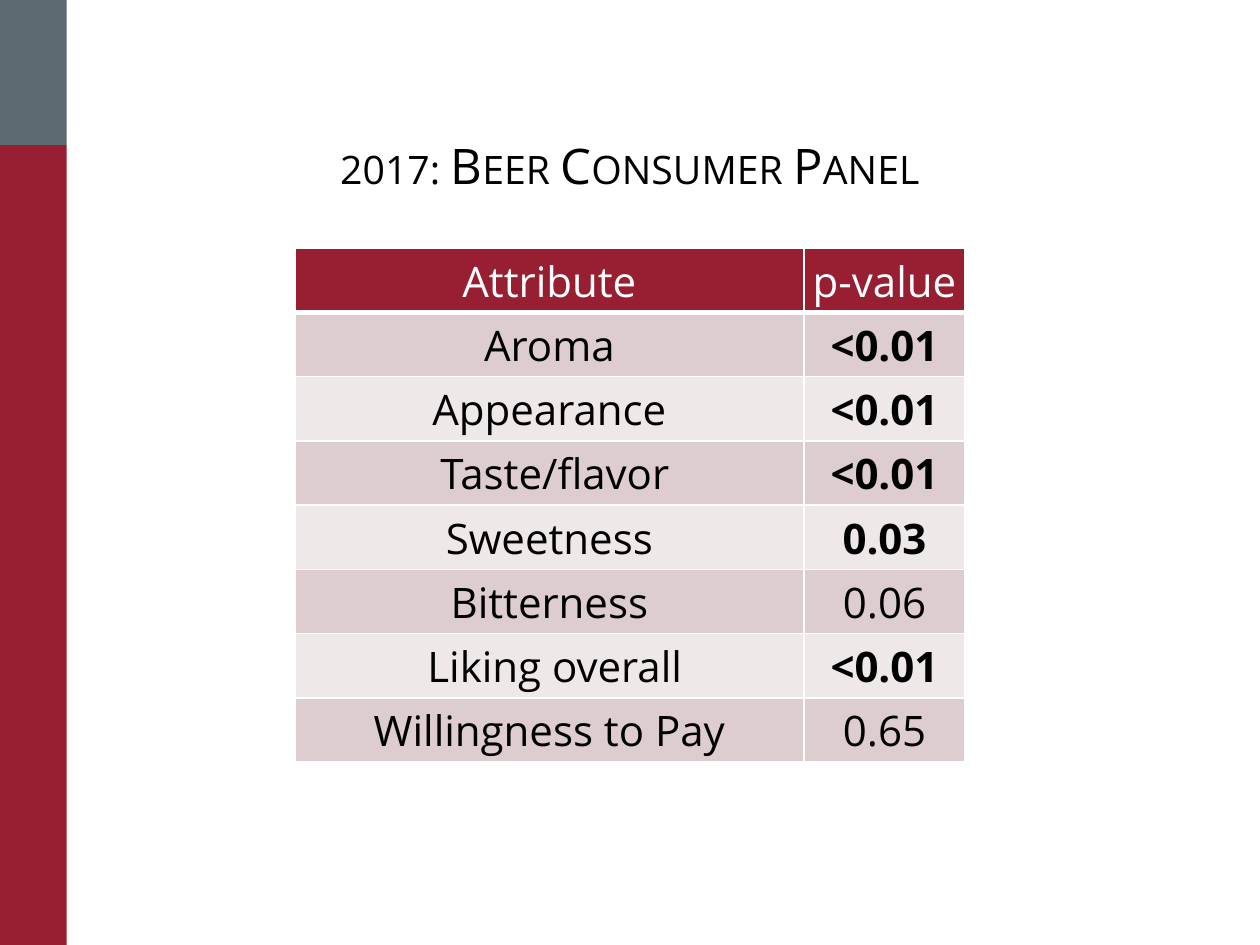
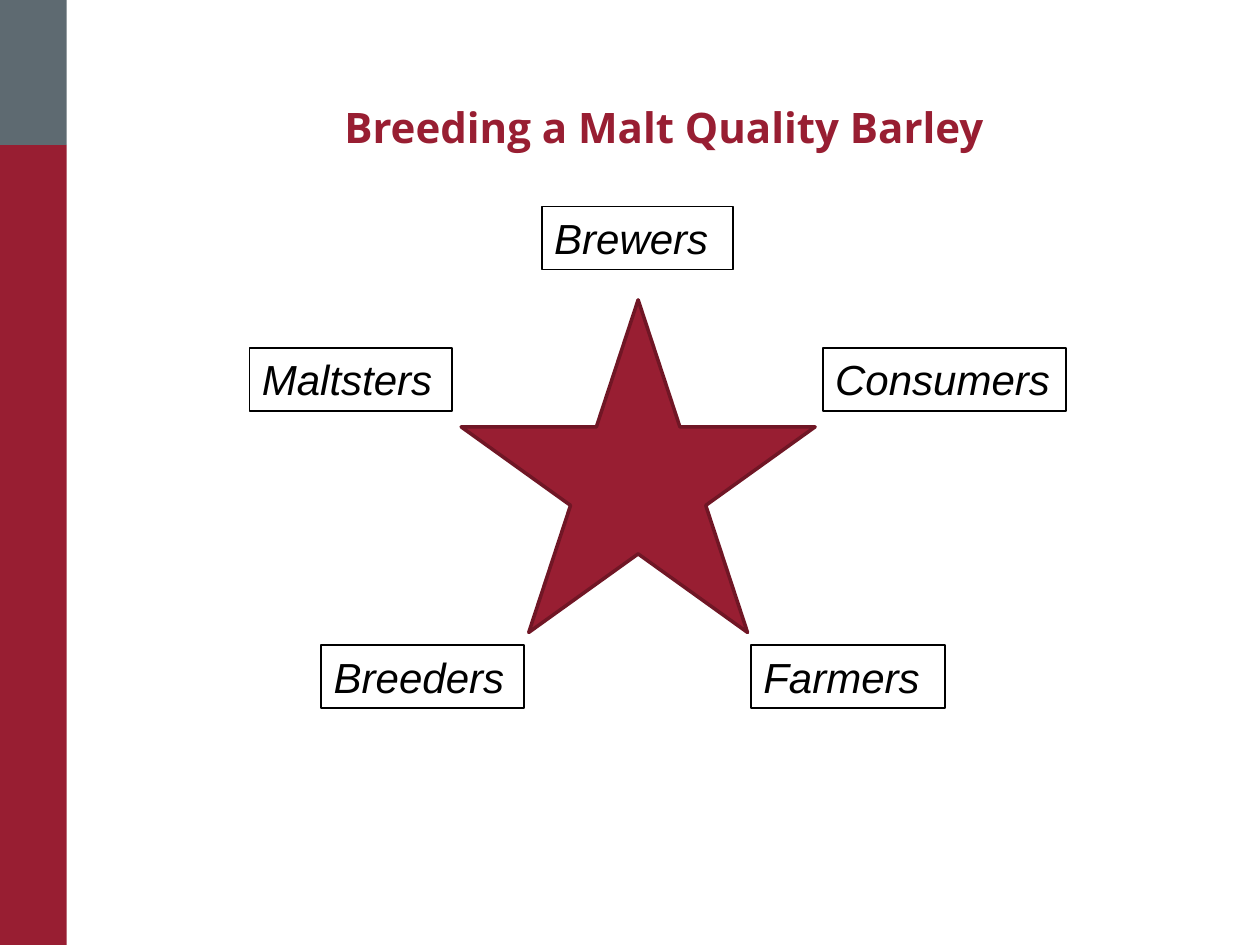
from lxml import etree
from pptx import Presentation
from pptx.dml.color import RGBColor
from pptx.enum.shapes import MSO_SHAPE
from pptx.enum.text import MSO_ANCHOR, PP_ALIGN
from pptx.oxml.ns import qn
from pptx.util import Inches, Pt

RECT, STAR = MSO_SHAPE.RECTANGLE, MSO_SHAPE.STAR_5_POINT
TOP, MIDDLE, BOTTOM = MSO_ANCHOR.TOP, MSO_ANCHOR.MIDDLE, MSO_ANCHOR.BOTTOM
LEFT, CENTER = PP_ALIGN.LEFT, PP_ALIGN.CENTER

RED, GRAY, DARK = "981E32", "5E6A71", "701625"
BLACK, WHITE = "000000", "FFFFFF"
BANDS = ("DDCDCE", "EFE8E8")
SANS, ARIAL = "Open Sans", "Arial"

SCORES = [
    ("Attribute", "p-value"),
    ("Aroma", "<0.01"),
    ("Appearance", "<0.01"),
    (" Taste/flavor", "<0.01"),
    ("Sweetness", "0.03"),
    ("Bitterness", "0.06"),
    (" Liking overall", "<0.01"),
    ("Willingness to Pay", "0.65"),
]
STRONG = ("<0.01", "0.03")
COLS = (4.04, 1.28)
ROW = 0.51

UPPER, LOWER = 2.76, 5.12
ROLES = [
    ("Brewers", 4.3, 1.64, 1.52),
    ("Maltsters", 1.98, UPPER, 1.61),
    ("Breeders", 2.55, LOWER, 1.61),
    ("Consumers", 6.53, UPPER, 1.93),
    ("Farmers", 5.96, LOWER, 1.54),
]


def rgb(code):
    return RGBColor.from_string(code)


def place(*sizes):
    return [Inches(size) for size in sizes]


def write(frame, text, color, align=LEFT, **look):
    para = frame.paragraphs[0]
    para.alignment = align
    run = para.add_run()
    run.text = text
    for name, value in look.items():
        setattr(run.font, name, value)
    run.font.color.rgb = rgb(color)
    return para, run


def add_form(slide, kind, at, fill=None, line=None, width=1):
    form = slide.shapes.add_shape(kind, *place(*at))
    form.shadow.inherit = False
    if fill:
        form.fill.solid()
        form.fill.fore_color.rgb = rgb(fill)
    else:
        form.fill.background()
    if line:
        form.line.color.rgb = rgb(line)
        form.line.width = Pt(width)
    else:
        form.line.fill.background()
    return form


def add_slide(deck):
    slide = deck.slides.add_slide(deck.slide_layouts[6])
    add_form(slide, RECT, (0, 1.15, 0.53, 6.35), RED)
    add_form(slide, RECT, (0, 0, 0.53, 1.15), GRAY)
    return slide


def add_title(slide, text, at, color, size, bold=False, small=False):
    frame = slide.shapes.add_textbox(*place(*at)).text_frame
    frame.word_wrap = True
    frame.vertical_anchor = BOTTOM
    frame.margin_left = frame.margin_right = Inches(0.5)
    para, run = write(frame, text, color, CENTER,
                      name=SANS, size=Pt(size), bold=bold)
    para.line_spacing = 0.9
    if small:
        run.font._element.set("cap", "small")


def add_edges(cell, top, bottom):
    props = cell._tc.get_or_add_tcPr()
    for side, width in (("L", 1), ("R", 1), ("T", top), ("B", bottom)):
        edge = etree.SubElement(props, qn("a:ln" + side), w=str(Pt(width)))
        fill = etree.SubElement(edge, qn("a:solidFill"))
        etree.SubElement(fill, qn("a:srgbClr"), val=WHITE)


def fill_cell(cell, text, row):
    head = row == 0
    add_edges(cell, 3 if row == 1 else 1, 3 if head else 1)
    cell.fill.solid()
    cell.fill.fore_color.rgb = rgb(RED if head else BANDS[(row - 1) % 2])
    cell.vertical_anchor = MIDDLE
    for side, size in dict(left=0.01, right=0.01, top=0.01, bottom=0).items():
        setattr(cell, "margin_" + side, Inches(size))
    write(cell.text_frame, text, WHITE if head else BLACK, CENTER,
          name=SANS, size=Pt(24), bold=text in STRONG)


def add_scores(slide):
    at = place(2.34, 1.97, sum(COLS), ROW * len(SCORES))
    table = slide.shapes.add_table(len(SCORES), len(COLS), *at).table
    table.horz_banding = False
    for col, width in zip(table.columns, COLS):
        col.width = Inches(width)
    for row, texts in enumerate(SCORES):
        table.rows[row].height = Inches(ROW)
        for col, text in enumerate(texts):
            fill_cell(table.cell(row, col), text, row)


def add_role(slide, text, left, top, width):
    box = add_form(slide, RECT, (left, top, width, 0.5), line=BLACK)
    box.text_frame.vertical_anchor = TOP
    write(box.text_frame, text, BLACK, name=ARIAL, size=Pt(24), italic=True)


def main():
    deck = Presentation()
    deck.slide_width, deck.slide_height = place(10, 7.5)

    panel = add_slide(deck)
    add_scores(panel)
    add_title(panel, "2017: Beer Consumer Panel", (0, 1.07, 10, 0.53),
              BLACK, 28, small=True)

    barley = add_slide(deck)
    add_title(barley, "Breeding a Malt Quality Barley",
              (0.54, 0.8, 9.46, 0.46), RED, 24, bold=True)
    for role in ROLES:
        add_role(barley, *role)
    add_form(barley, STAR, (3.66, 2.38, 2.81, 2.64), RED, DARK, 2)

    deck.save("out.pptx")


if __name__ == "__main__":
    main()
